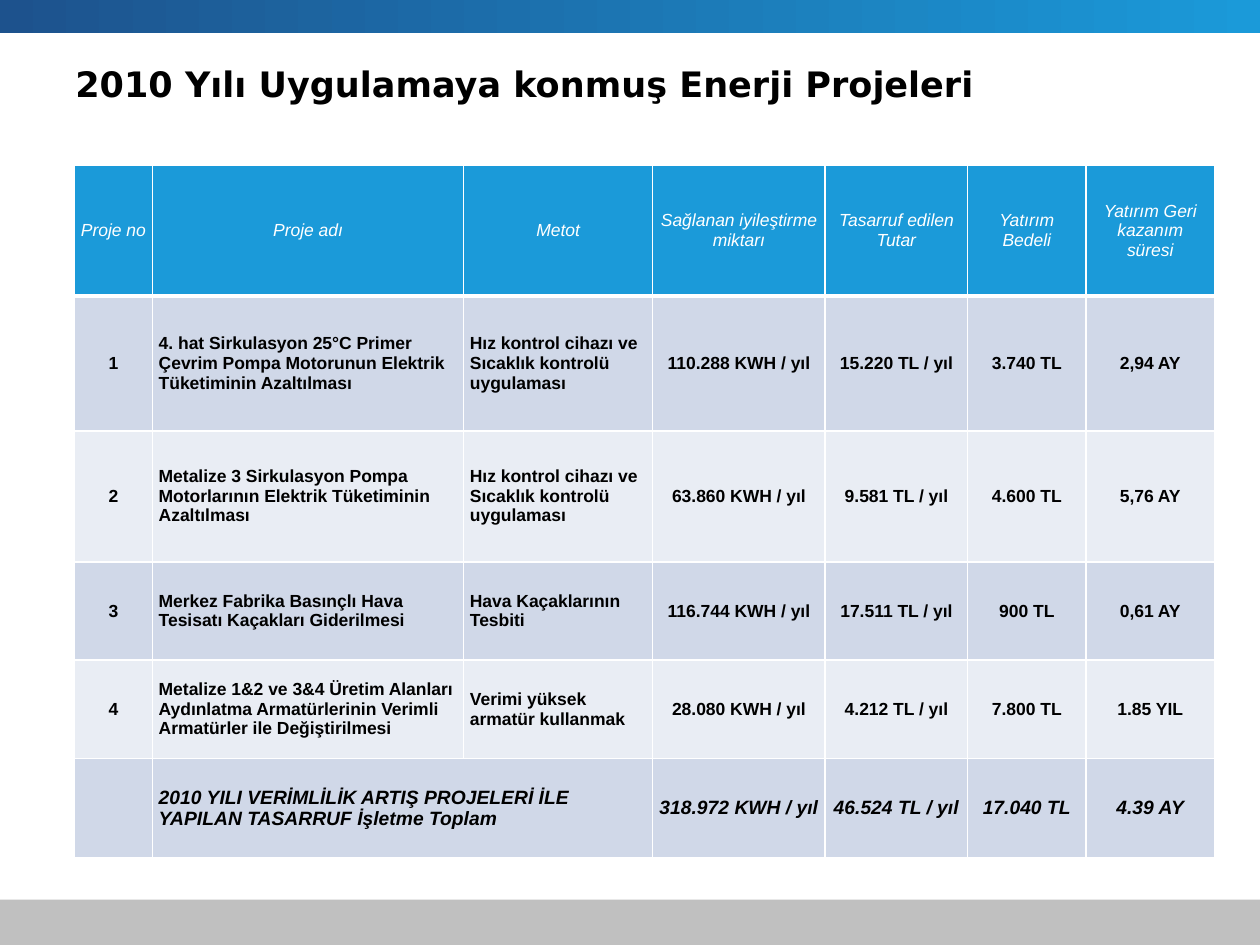
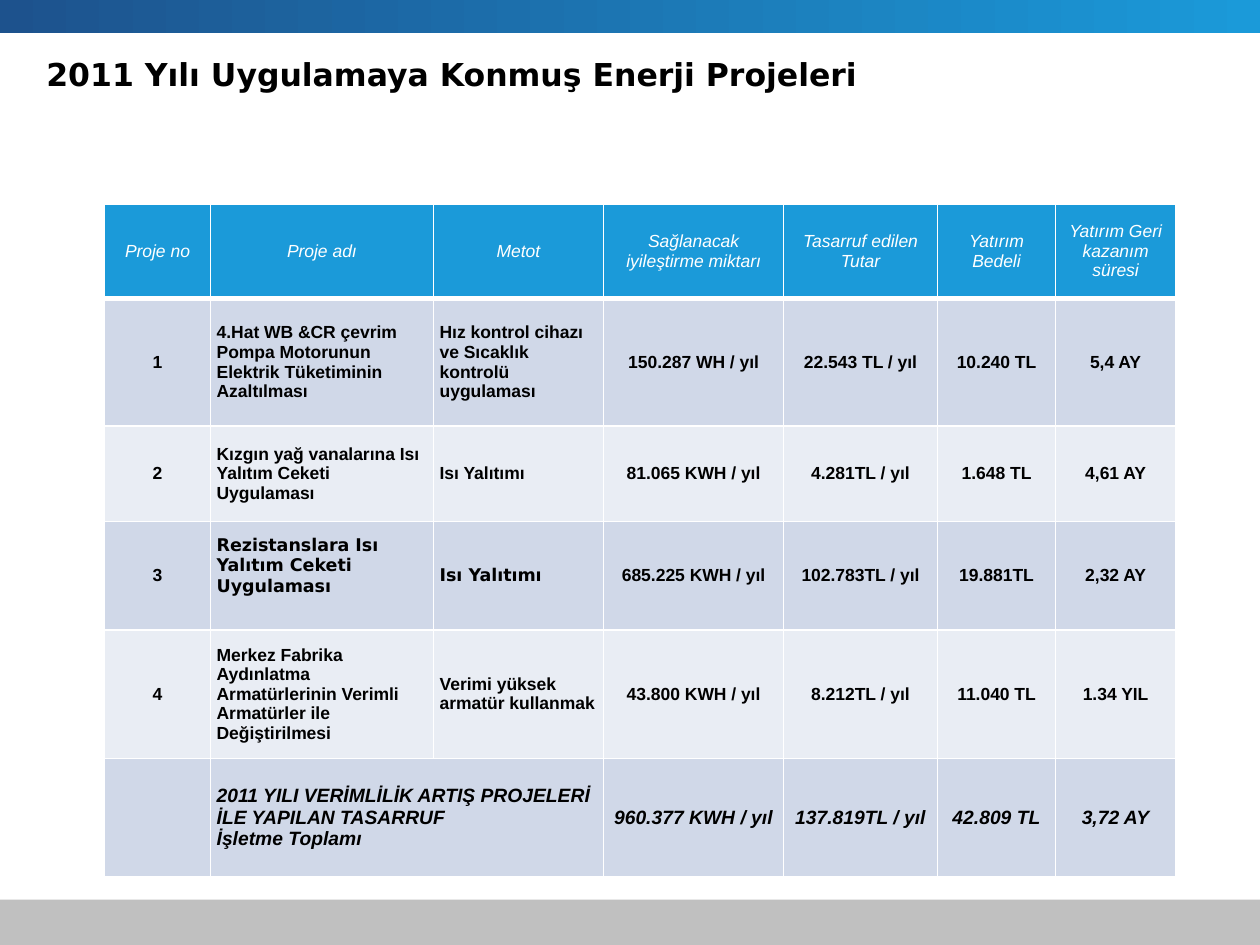
from dataclasses import dataclass

from lxml import etree
from pptx import Presentation
from pptx.dml.color import RGBColor
from pptx.enum.shapes import MSO_SHAPE
from pptx.enum.text import MSO_ANCHOR, PP_ALIGN
from pptx.oxml.ns import qn
from pptx.util import Inches, Pt


@dataclass(frozen=True)
class Theme:
    navy: str = "1D528D"
    blue: str = "1B9AD9"
    gray: str = "C0C0C0"
    row_dark: str = "D0D8E8"
    row_light: str = "E9EDF4"
    white: str = "FFFFFF"
    black: str = "000000"
    title_font: str = "DejaVu Sans"
    body_font: str = "Arial"
    body_size: int = 10
    total_size: int = 11


THEME = Theme()


def write_text(tf, text, size=THEME.body_size, font=THEME.body_font, color=THEME.black,
               bold=False, italic=False, align=PP_ALIGN.LEFT):
    """Fill a text frame, one paragraph for each line of text."""
    tf.word_wrap = True
    for i, line in enumerate(text.split("\n")):
        p = tf.paragraphs[0] if i == 0 else tf.add_paragraph()
        p.alignment = align
        r = p.add_run()
        r.text = line
        r.font.size = Pt(size)
        r.font.name = font
        r.font.bold = bold
        r.font.italic = italic
        r.font.color.rgb = RGBColor.from_string(color)


def set_borders(cell, top, bottom):
    """Draw white cell borders; top and bottom are widths in points."""
    tc_pr = cell._tc.get_or_add_tcPr()
    for side, width in (("L", 1), ("R", 1), ("T", top), ("B", bottom)):
        ln = etree.SubElement(tc_pr, qn(f"a:ln{side}"), w=str(Pt(width)))
        fill = etree.SubElement(ln, qn("a:solidFill"))
        etree.SubElement(fill, qn("a:srgbClr"), val=THEME.white)


SLIDES = [
    {
        "title": "2010 Yılı Uygulamaya konmuş Enerji Projeleri",
        "title_at": (0.5, 0.35),
        "title_size": 20,
        "table_at": (0.59, 1.31),
        "col_widths": [0.62, 2.47, 1.5, 1.37, 1.13, 0.94, 1.02],
        "row_heights": [1.04, 1.07, 1.04, 0.78, 0.78, 0.79],
        "gain_header": "Sağlanan iyileştirme miktarı",
        "projects": [
            ["1", "4. hat Sirkulasyon 25°C Primer Çevrim Pompa Motorunun Elektrik "
             "Tüketiminin Azaltılması",
             "Hız kontrol cihazı ve Sıcaklık kontrolü uygulaması",
             "110.288 KWH / yıl", "15.220 TL / yıl", "3.740 TL", "2,94 AY"],
            ["2", "Metalize 3 Sirkulasyon Pompa Motorlarının Elektrik Tüketiminin Azaltılması",
             "Hız kontrol cihazı ve Sıcaklık kontrolü uygulaması",
             "63.860 KWH / yıl", "9.581 TL / yıl", "4.600 TL", "5,76 AY"],
            ["3", "Merkez Fabrika Basınçlı Hava Tesisatı Kaçakları Giderilmesi",
             "Hava Kaçaklarının Tesbiti",
             "116.744 KWH / yıl", "17.511 TL / yıl", "900 TL", "0,61 AY"],
            ["4", "Metalize 1&2 ve 3&4 Üretim Alanları Aydınlatma Armatürlerinin Verimli "
             "Armatürler ile Değiştirilmesi",
             "Verimi yüksek armatür kullanmak",
             "28.080 KWH / yıl", "4.212 TL / yıl", "7.800 TL", "1.85 YIL"],
        ],
        "total": ["", "2010 YILI VERİMLİLİK ARTIŞ PROJELERİ İLE YAPILAN TASARRUF İşletme Toplam",
                  "", "318.972 KWH / yıl", "46.524 TL / yıl", "17.040 TL", "4.39 AY"],
        "wide_font_cells": [],
        "raised_cells": [],
    },
    {
        "title": "2011 Yılı Uygulamaya Konmuş Enerji Projeleri",
        "title_at": (0.27, 0.28),
        "title_size": 18,
        "table_at": (0.83, 1.62),
        "col_widths": [0.84, 1.77, 1.35, 1.43, 1.22, 0.94, 0.95],
        "row_heights": [0.75, 1.01, 0.76, 0.86, 1.02, 0.94],
        "gain_header": "Sağlanacak iyileştirme miktarı",
        "projects": [
            ["1", "4.Hat WB &CR çevrim Pompa Motorunun Elektrik Tüketiminin Azaltılması",
             "Hız kontrol cihazı ve Sıcaklık kontrolü uygulaması",
             "150.287 WH / yıl", "22.543 TL / yıl", "10.240 TL", "5,4 AY"],
            ["2", "Kızgın yağ vanalarına Isı Yalıtım Ceketi Uygulaması", "Isı Yalıtımı",
             "81.065 KWH / yıl", "4.281TL / yıl", "1.648 TL", "4,61 AY"],
            ["3", "Rezistanslara Isı Yalıtım Ceketi Uygulaması", "Isı Yalıtımı",
             "685.225 KWH / yıl", "102.783TL / yıl", "19.881TL", "2,32 AY"],
            ["4", "Merkez Fabrika Aydınlatma Armatürlerinin Verimli Armatürler ile "
             "Değiştirilmesi",
             "Verimi yüksek armatür kullanmak",
             "43.800 KWH / yıl", "8.212TL / yıl", "11.040 TL", "1.34 YIL"],
        ],
        "total": ["", "2011 YILI VERİMLİLİK ARTIŞ PROJELERİ İLE YAPILAN TASARRUF\nİşletme Toplamı",
                  "", "960.377 KWH / yıl", "137.819TL / yıl", "42.809 TL", "3,72 AY"],
        "wide_font_cells": [(3, 1), (3, 2)],
        "raised_cells": [(3, 1)],
    },
]

prs = Presentation()
prs.slide_width = Inches(10)
prs.slide_height = Inches(7.5)

for data in SLIDES:
    slide = prs.slides.add_slide(prs.slide_layouts[6])

    # Footer and header bands
    for top, height in ((7.14, 0.36), (0, 0.26)):
        band = slide.shapes.add_shape(MSO_SHAPE.RECTANGLE, 0, Inches(top),
                                      prs.slide_width, Inches(height))
        band.shadow.inherit = False
        band.line.fill.background()
        if top:
            band.fill.solid()
            band.fill.fore_color.rgb = RGBColor.from_string(THEME.gray)
        else:
            band.fill.gradient()
            band.fill.gradient_angle = 0
            for stop, color in zip(band.fill.gradient_stops, (THEME.navy, THEME.blue)):
                stop.color.rgb = RGBColor.from_string(color)

    # Title
    left, top = data["title_at"]
    title = slide.shapes.add_textbox(Inches(left), Inches(top), Inches(9), Inches(0.62))
    title.text_frame.vertical_anchor = MSO_ANCHOR.MIDDLE
    write_text(title.text_frame, data["title"], size=data["title_size"],
               font=THEME.title_font, bold=True)

    # Project table
    header = ["Proje no", "Proje adı", "Metot", data["gain_header"],
              "Tasarruf edilen Tutar", "Yatırım Bedeli", "Yatırım Geri kazanım süresi"]
    rows = [header, *data["projects"], data["total"]]
    widths, heights = data["col_widths"], data["row_heights"]
    left, top = data["table_at"]
    table = slide.shapes.add_table(len(rows), len(header), Inches(left), Inches(top),
                                   Inches(sum(widths)), Inches(sum(heights))).table
    for column, width in zip(table.columns, widths):
        column.width = Inches(width)
    for row, height in zip(table.rows, heights):
        row.height = Inches(height)

    last = len(rows) - 1
    table.cell(last, 1).merge(table.cell(last, 2))

    for i, values in enumerate(rows):
        for j, text in enumerate(values):
            cell = table.cell(i, j)
            is_header, is_total = i == 0, i == last
            set_borders(cell, top=3 if i == 1 else 1, bottom=3 if is_header else 1)
            fill = THEME.blue if is_header else THEME.row_dark if i % 2 else THEME.row_light
            cell.fill.solid()
            cell.fill.fore_color.rgb = RGBColor.from_string(fill)
            cell.vertical_anchor = MSO_ANCHOR.MIDDLE
            cell.margin_left = cell.margin_right = Inches(0.05)
            cell.margin_top = 0
            cell.margin_bottom = Inches(0.16 if (i, j) in data["raised_cells"] else 0)
            if not text:
                continue
            write_text(
                cell.text_frame, text,
                size=THEME.total_size if is_total else THEME.body_size,
                font=THEME.title_font if (i, j) in data["wide_font_cells"] else THEME.body_font,
                color=THEME.white if is_header else THEME.black,
                bold=not is_header,
                italic=is_header or is_total,
                align=PP_ALIGN.LEFT if j in (1, 2) and not is_header else PP_ALIGN.CENTER,
            )

prs.save("out.pptx")
